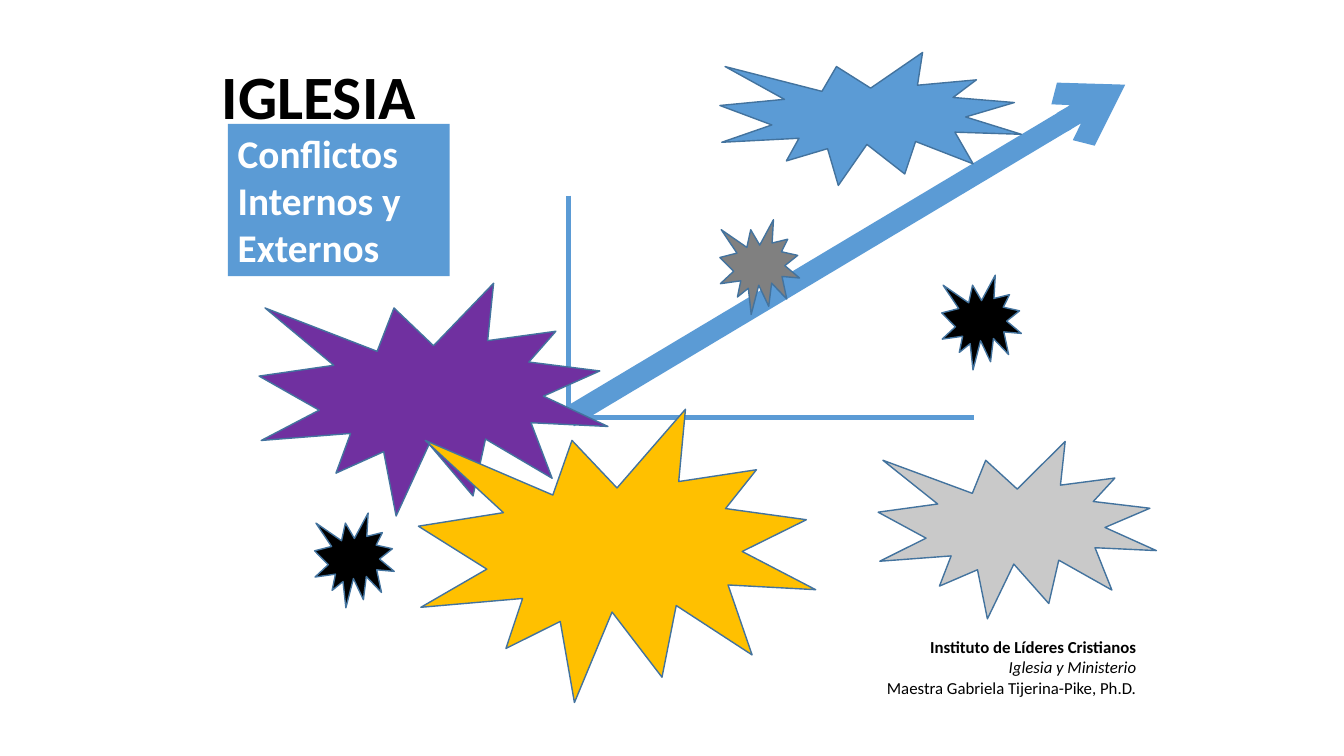
"""Build the church conflicts slide with its axes, arrow and bursts."""
from lxml import etree
from pptx import Presentation
from pptx.dml.color import RGBColor
from pptx.enum.shapes import MSO_CONNECTOR, MSO_SHAPE
from pptx.enum.text import MSO_ANCHOR, PP_ALIGN
from pptx.oxml.ns import qn
from pptx.util import Inches, Pt

BLUE = RGBColor(0x5B, 0x9B, 0xD5)
OUTLINE = RGBColor(0x43, 0x73, 0x9E)
PURPLE = RGBColor(0x70, 0x30, 0xA0)
SILVER = RGBColor(0xC9, 0xC9, 0xC9)
GOLD = RGBColor(0xFF, 0xC0, 0x00)
GRAY = RGBColor(0x80, 0x80, 0x80)
BLACK = RGBColor(0x00, 0x00, 0x00)
WHITE = RGBColor(0xFF, 0xFF, 0xFF)


def format_text(p, size, color, bold=False, italic=False, align=PP_ALIGN.LEFT):
    p.alignment = align
    p.line_spacing = 1.0
    for r in p.runs:
        r.font.name = "Calibri"
        r.font.size = Pt(size)
        r.font.color.rgb = color
        r.font.bold = bold
        r.font.italic = italic


def add_line(s, start, end, width):
    line = s.shapes.add_connector(
        MSO_CONNECTOR.STRAIGHT, *map(Inches, start + end))
    line.line.color.rgb = BLUE
    line.line.width = Pt(width)
    etree.SubElement(line._element.spPr, qn("a:effectLst"))
    return line


prs = Presentation()
prs.slide_width = Inches(13.33)
prs.slide_height = Inches(7.5)
s = prs.slides.add_slide(prs.slide_layouts[5])

title = s.shapes.title
title.left, title.top, title.width, title.height = map(
    Inches, (2.1, 0.52, 6.46, 1.58))
tf = title.text_frame
tf.text = "IGLESIA"
tf.vertical_anchor = MSO_ANCHOR.TOP
format_text(tf.paragraphs[0], 44, BLACK, bold=True)

credits = s.shapes.add_textbox(*map(Inches, (7.61, 6.27, 3.76, 0.71)))
tf = credits.text_frame
tf.word_wrap = True
tf.text = ("Instituto de Líderes Cristianos\n"
           "Iglesia y Ministerio\n"
           "Maestra Gabriela Tijerina-Pike, Ph.D.")
for i, p in enumerate(tf.paragraphs):
    format_text(p, 12, BLACK, bold=i == 0, italic=i == 1,
                align=PP_ALIGN.RIGHT)

origin = (5.64, 4.14)
add_line(s, (5.64, 1.94), origin, 3.25)
add_line(s, (9.66, 4.14), origin, 3.25)
arrow = add_line(s, origin, (11.16, 0.84), 15)
etree.SubElement(arrow.line._get_or_add_ln(), qn("a:tailEnd"), type="arrow")

small = (0.79, 0.94)
bursts = [
    ((2.57, 2.81), (3.46, 2.31), PURPLE),
    ((8.71, 4.38), (2.76, 1.76), SILVER),
    ((4.15, 4.06), (3.94, 2.91), GOLD),
    ((7.14, 0.52), (2.99, 1.32), BLUE),
    ((9.34, 2.73), small, BLACK),
    ((7.14, 2.18), small, GRAY),
    ((3.12, 5.09), small, BLACK),
]
for position, size, color in bursts:
    sp = s.shapes.add_shape(
        MSO_SHAPE.EXPLOSION1, *map(Inches, position + size))
    sp.shadow.inherit = False
    sp.fill.solid()
    sp.fill.fore_color.rgb = color
    sp.line.color.rgb = OUTLINE
    sp.line.width = Pt(1)

label = s.shapes.add_shape(
    MSO_SHAPE.RECTANGLE, *map(Inches, (2.26, 1.23, 2.2, 1.51)))
label.shadow.inherit = False
label.fill.solid()
label.fill.fore_color.rgb = BLUE
label.line.fill.background()
tf = label.text_frame
tf.word_wrap = True
tf.vertical_anchor = MSO_ANCHOR.TOP
tf.text = "Conflictos Internos y Externos"
format_text(tf.paragraphs[0], 28, WHITE, bold=True)

prs.save("out.pptx")
